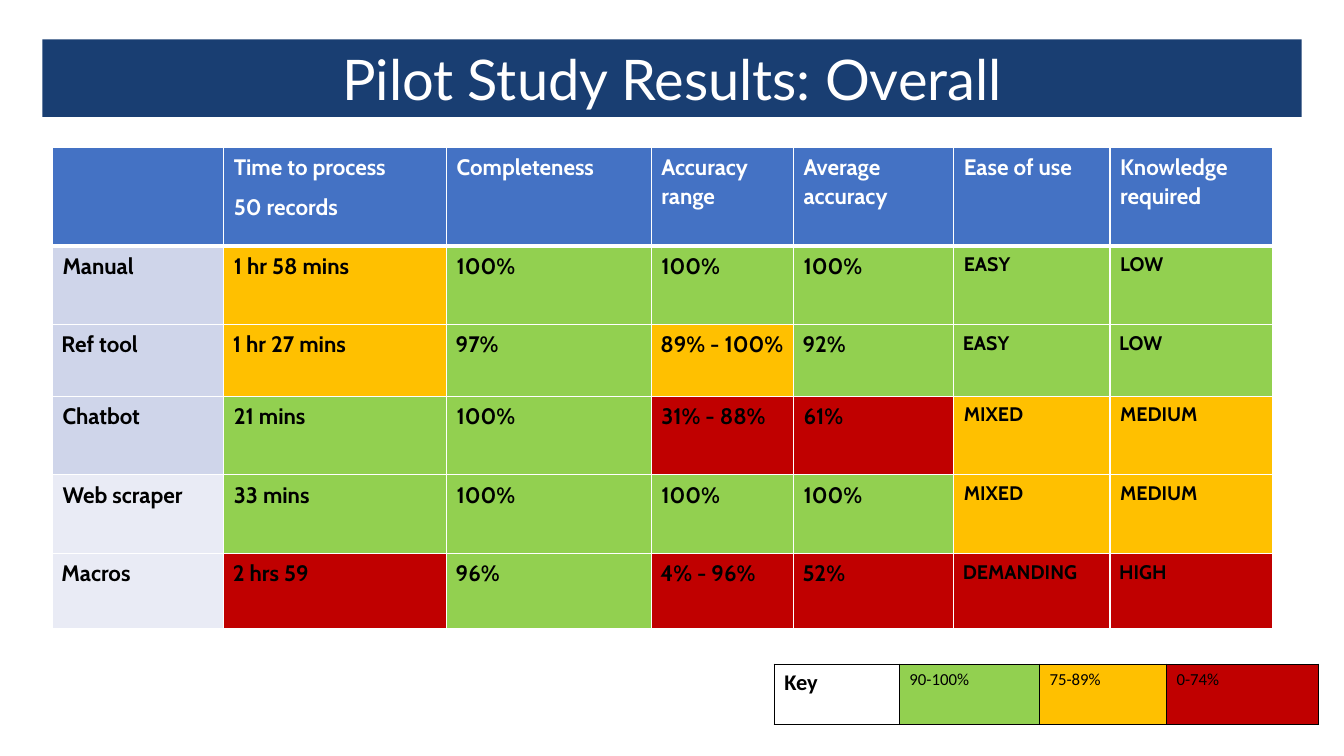
from lxml import etree
from pptx import Presentation
from pptx import util as u
from pptx.dml.color import RGBColor
from pptx.enum import shapes, text
from pptx.oxml import ns

GREEN, AMBER, RED = "92D050", "FFC000", "C00000"
NAVY, BLUE, WHITE, BLACK = "193E72", "4472C4", "FFFFFF", "000000"
LILAC, PALE = "CFD5EA", "E9EBF5"
FILLS = {"G": GREEN, "A": AMBER, "R": RED}


def rgb(value):
    return RGBColor.from_string(value)


def write(tf, content, font="Cabin", size=16, color=BLACK, bold=False,
          align=None, line=None, after=None):
    for i, words in enumerate(content.split("\n")):
        p = tf.paragraphs[0] if i == 0 else tf.add_paragraph()
        p.alignment = align
        p.line_spacing = line
        if after is not None:
            p.space_after = u.Pt(after)
        r = p.add_run()
        r.text = words
        r.font.name = font
        r.font.size = u.Pt(size)
        r.font.bold = bold
        r.font.color.rgb = rgb(color)


class Deck:
    def __init__(self, width, height):
        self.prs = Presentation()
        self.prs.slide_width = u.Inches(width)
        self.prs.slide_height = u.Inches(height)
        self.s = self.prs.slides.add_slide(self.prs.slide_layouts[6])

    def banner(self, content, x, y, w, h):
        sp = self.s.shapes.add_shape(shapes.MSO_SHAPE.RECTANGLE,
                                     *map(u.Inches, (x, y, w, h)))
        sp.shadow.inherit = False
        sp.fill.solid()
        sp.fill.fore_color.rgb = rgb(NAVY)
        sp.line.fill.background()
        tf = sp.text_frame
        tf.word_wrap = True
        tf.auto_size = text.MSO_AUTO_SIZE.SHAPE_TO_FIT_TEXT
        write(tf, content, font="Lato", size=40, color=WHITE,
              align=text.PP_ALIGN.CENTER)

    def table(self, x, y, widths, heights):
        frame = self.s.shapes.add_table(
            len(heights), len(widths),
            *map(u.Inches, (x, y, sum(widths), sum(heights))))
        tbl = frame.table
        tbl.first_row = tbl.horz_banding = False
        for col, w in zip(tbl.columns, widths):
            col.width = u.Inches(w)
        for row, h in zip(tbl.rows, heights):
            row.height = u.Inches(h)
        return tbl

    def cell(self, cell, content, fill, edge, top=1, bottom=1, **fmt):
        tcPr = cell._tc.get_or_add_tcPr()
        for side, width in zip("LRTB", (1, 1, top, bottom)):
            ln = etree.SubElement(tcPr, ns.qn(f"a:ln{side}"), w=str(u.Pt(width)))
            solid = etree.SubElement(ln, ns.qn("a:solidFill"))
            etree.SubElement(solid, ns.qn("a:srgbClr"), val=edge)
        if fill:
            cell.fill.solid()
            cell.fill.fore_color.rgb = rgb(fill)
        else:
            cell.fill.background()
        if content:
            write(cell.text_frame, content, **fmt)

    def key(self, x, y, widths, height, entries):
        tbl = self.table(x, y, widths, [height])
        for c, (content, fill) in enumerate(entries):
            self.cell(tbl.cell(0, c), content, fill, BLACK, font="Calibri",
                      size=12 if fill else 16, bold=not fill)

    def results(self, x, y, widths, heights, header, rows):
        tbl = self.table(x, y, widths, heights)
        fmt = dict(bold=True, line=1.07, after=8)
        for c, content in enumerate(header):
            self.cell(tbl.cell(0, c), content, BLUE, WHITE, bottom=3,
                      color=WHITE, **fmt)
        for n, (name, shade, ratings, values) in enumerate(rows, 1):
            fills = [shade] + [FILLS[k] for k in ratings]
            for c, (content, fill) in enumerate(zip([name] + values, fills)):
                cell = tbl.cell(n, c)
                self.cell(cell, content, fill, WHITE, top=3 if n == 1 else 1,
                          size=14 if c > 4 else 16, **fmt)
                if n in (2, 5):
                    cell.margin_left = cell.margin_right = u.Inches(0.09)


def main():
    deck = Deck(13.33, 7.5)
    deck.banner("Pilot Study Results: Overall", 0.42, 0.39, 12.49, 0.77)
    deck.key(7.68, 6.59, [1.24, 1.39, 1.26, 1.51], 0.6,
             [("Key", None), ("90-100%", GREEN), ("75-89%", AMBER),
              ("0-74%", RED)])
    deck.results(
        0.52, 1.46, [1.7, 2.21, 2.03, 1.41, 1.59, 1.55, 1.61],
        [0.98, 0.78, 0.71, 0.78, 0.78, 0.75],
        ["", "Time to process\n50 records", "Completeness", "Accuracy range",
         "Average accuracy", "Ease of use", "Knowledge required"],
        [("Manual", LILAC, "AGGGGG",
          ["1 hr 58 mins", "100%", "100%", "100%", "EASY", "LOW"]),
         ("Ref tool", LILAC, "AGAGGG",
          ["1 hr 27 mins", "97%", "89% - 100%", "92%", "EASY", "LOW"]),
         ("Chatbot", LILAC, "GGRRAA",
          ["21 mins", "100%", "31% - 88%", "61%", "MIXED", "MEDIUM"]),
         ("Web scraper", PALE, "GGGGAA",
          ["33 mins", "100%", "100%", "100%", "MIXED", "MEDIUM"]),
         ("Macros", PALE, "RGRRRR",
          ["2 hrs 59", "96%", "4% - 96%", "52%", "DEMANDING", "HIGH"])])
    deck.prs.save("out.pptx")


if __name__ == "__main__":
    main()
